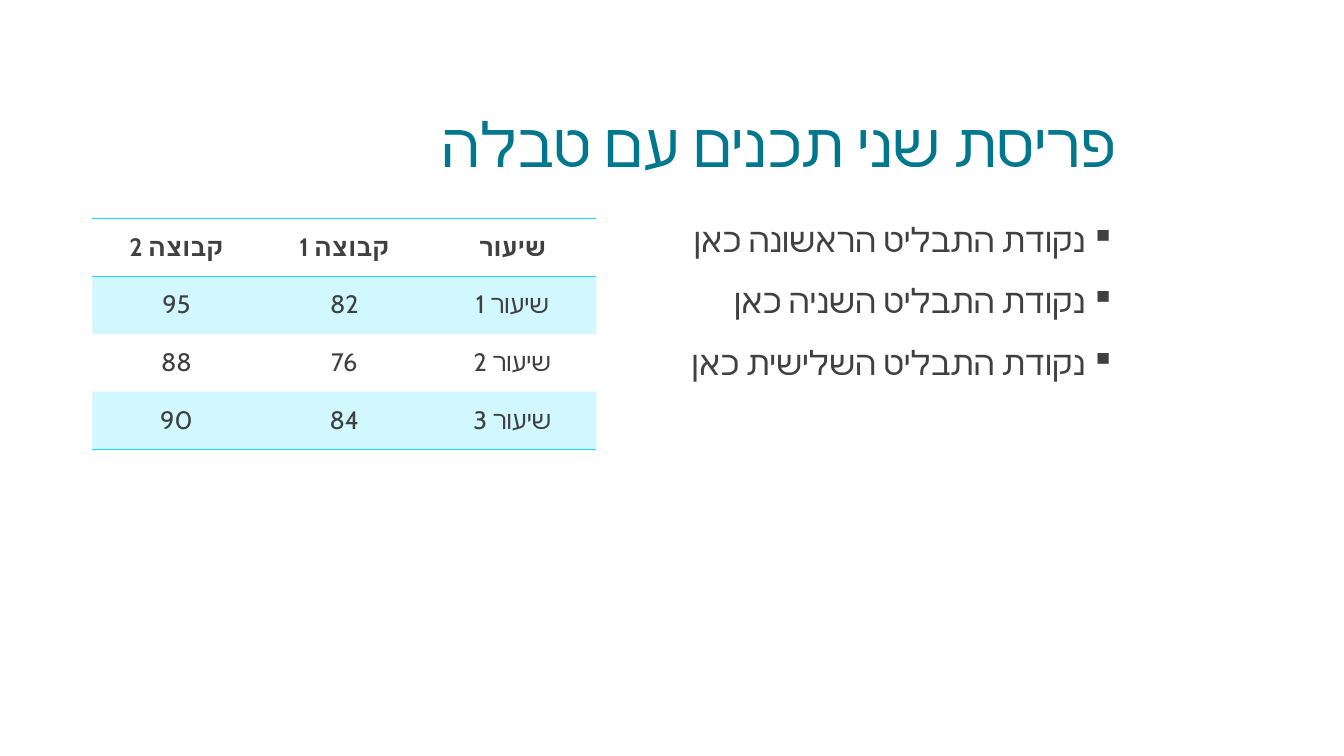
from lxml import etree
from pptx import Presentation
from pptx.dml.color import RGBColor
from pptx.enum.text import MSO_ANCHOR, PP_ALIGN
from pptx.oxml.ns import qn
from pptx.util import Inches, Pt

TOP, MIDDLE, BOTTOM = MSO_ANCHOR.TOP, MSO_ANCHOR.MIDDLE, MSO_ANCHOR.BOTTOM
RIGHT, CENTER = PP_ALIGN.RIGHT, PP_ALIGN.CENTER
COLORS = {"title": "00778D", "text": "404040", "accent": "1BDCFF"}
FONT = "Cabin"
UNIT = Inches(1) / 12
COLS, ROWS = 160, 90
PLAIN_TABLE = "{2D5ABB26-0587-4C30-8999-92F81FD0307C}"

LEFT, GAP, PANEL = 11, 3, 60
TITLE_TOP, TITLE_ROWS = 5, 17
PANEL_TOP, BODY_ROWS, TABLE_ROWS = 26, 58.8, 27.5

TITLE = "פריסת שני תכנים עם טבלה"
POINTS = [
    "נקודת התבליט הראשונה כאן",
    "נקודת התבליט השניה כאן",
    "נקודת התבליט השלישית כאן",
]
SCORES = [
    ["קבוצה 2", "קבוצה 1", "שיעור"],
    ["95", "82", "שיעור 1"],
    ["88", "76", "שיעור 2"],
    ["90", "84", "שיעור 3"],
]


def add(parent, tag, **attrs):
    return etree.SubElement(parent, qn(tag), attrs)


class Deck:
    def __init__(self):
        self.prs = Presentation()
        self.prs.slide_width = round(COLS * UNIT)
        self.prs.slide_height = round(ROWS * UNIT)
        self.s = self.prs.slides.add_slide(self.prs.slide_layouts[6])

    def box(self, *grid):
        return [round(v * UNIT) for v in grid]

    def paragraph(self, p, text, color, bullet=None, font=None, para=None):
        pPr = p._p.get_or_add_pPr()
        pPr.set("rtl", "1")
        if bullet:
            indent = Inches(0.3)
            pPr.set("marL", str(indent))
            pPr.set("indent", str(-indent))
            add(pPr, "a:buChar", char=bullet)
        for name, value in (para or {}).items():
            setattr(p, name, value)
        r = p.add_run()
        r.text = text
        for name, value in {"name": FONT, **(font or {})}.items():
            setattr(r.font, name, value)
        r.font.color.rgb = RGBColor.from_string(COLORS[color])
        add(r._r.get_or_add_rPr(), "a:cs", typeface=FONT)

    def text(self, grid, lines, color, size, spacing, anchor, bullet=None):
        tf = self.s.shapes.add_textbox(*self.box(*grid)).text_frame
        tf.word_wrap = True
        tf.vertical_anchor = anchor
        for i, line in enumerate(lines):
            p = tf.add_paragraph() if i else tf.paragraphs[0]
            para = {"alignment": RIGHT, "line_spacing": spacing,
                    "space_before": Pt(18 if i else 0)}
            self.paragraph(p, line, color, bullet, {"size": Pt(size)}, para)

    def border(self, cell, side):
        ln = add(cell._tc.get_or_add_tcPr(), f"a:ln{side}", w=str(Pt(1)))
        add(add(ln, "a:solidFill"), "a:srgbClr", val=COLORS["accent"])

    def tint(self, cell, percent):
        cell.fill.solid()
        cell.fill.fore_color.rgb = RGBColor.from_string(COLORS["accent"])
        clr = cell._tc.tcPr.find(qn("a:solidFill")).find(qn("a:srgbClr"))
        add(clr, "a:alpha", val=str(percent * 1000))

    def table(self, grid, data):
        frame = self.s.shapes.add_table(len(data), len(data[0]), *self.box(*grid))
        tbl = frame.table
        tbl.first_row = tbl.horz_banding = False
        tbl._tbl.tblPr.find(qn("a:tableStyleId")).text = PLAIN_TABLE
        for i, row in enumerate(data):
            header, last = i == 0, i == len(data) - 1
            for j, value in enumerate(row):
                cell = tbl.cell(i, j)
                cell.vertical_anchor = MIDDLE
                self.paragraph(cell.text_frame.paragraphs[0], value, "text",
                               font={"size": Pt(18), "bold": header},
                               para={"alignment": CENTER})
                if header:
                    self.border(cell, "T")
                if header or last:
                    self.border(cell, "B")
                if i % 2:
                    self.tint(cell, 20)
                else:
                    cell.fill.background()


def main():
    deck = Deck()
    right_panel = LEFT + PANEL + GAP
    deck.text((LEFT, TITLE_TOP, 2 * PANEL + GAP, TITLE_ROWS), [TITLE],
              "title", 44, 0.85, BOTTOM)
    deck.text((right_panel, PANEL_TOP, PANEL, BODY_ROWS), POINTS,
              "text", 24, 0.9, TOP, "▪")
    deck.table((LEFT, PANEL_TOP, PANEL, TABLE_ROWS), SCORES)
    deck.prs.save("out.pptx")


if __name__ == "__main__":
    main()
